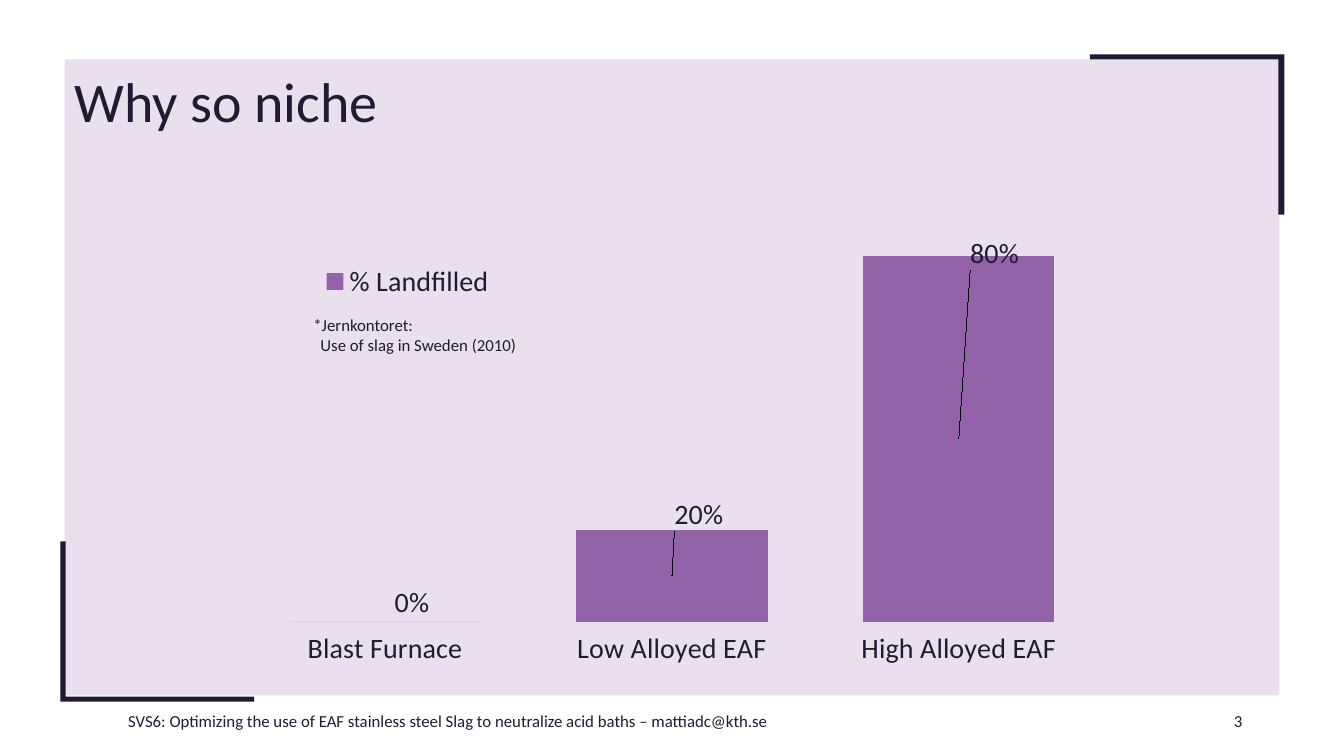
from lxml.etree import SubElement
from pptx import Presentation
from pptx.chart.data import CategoryChartData
from pptx.dml.color import RGBColor
from pptx.enum.chart import XL_CHART_TYPE, XL_LABEL_POSITION, XL_LEGEND_POSITION, XL_TICK_LABEL_POSITION, XL_TICK_MARK
from pptx.enum.shapes import MSO_SHAPE
from pptx.enum.text import MSO_ANCHOR, PP_ALIGN
from pptx.oxml import parse_xml
from pptx.oxml.ns import nsdecls, qn
from pptx.util import Inches, Pt

INK = RGBColor(0x20, 0x1A, 0x33)
PLUM = RGBColor(0x92, 0x63, 0xA9)
FACE = "Calibri"

TITLE = ["Why so niche"]
NOTE = ["*Jernkontoret:", "Use of slag in Sweden (2010)"]
FOOTER = ["SVS6: Optimizing the use of EAF stainless steel Slag to neutralize acid baths – mattiadc@kth.se"]
NUMBER = ["3"]
SERIES = "% Landfilled"
SHARES = [("Blast Furnace", 0), ("Low Alloyed EAF", 0.2), ("High Alloyed EAF", 0.8)]
SHIFTS = [(0.03, -0.04), (0.03, -0.13), (0.04, -0.39)]
CORNERS = [
    [(12.74, 0.54), (10.81, 0.54), (10.81, 0.59), (12.68, 0.59), (12.68, 2.13), (12.74, 2.13)],
    [(0.6, 6.96), (2.52, 6.96), (2.52, 6.91), (0.65, 6.91), (0.65, 5.37), (0.6, 5.37)],
]

deck = Presentation()
deck.slide_width, deck.slide_height = Inches(13.33), Inches(7.5)
slide = deck.slides.add_slide(deck.slide_layouts[6])
shapes = slide.shapes


def style(font, size):
    font.name, font.size = FACE, Pt(size)
    font.color.rgb = INK


def paint(shape, color):
    shape.shadow.inherit = False
    shape.fill.solid()
    shape.fill.fore_color.rgb = color
    shape.line.fill.background()


def write(lines, at, size=12, align=PP_ALIGN.LEFT, anchor=MSO_ANCHOR.TOP, wrap=False, inset=0):
    frame = shapes.add_textbox(*map(Inches, at)).text_frame
    frame.word_wrap = wrap
    frame.vertical_anchor = anchor
    for i, line in enumerate(lines):
        para = frame.add_paragraph() if i else frame.paragraphs[0]
        para.alignment = align
        if i and inset:
            props = para._p.get_or_add_pPr()
            props.set("marL", str(Inches(inset)))
            props.set("indent", "0")
        run = para.add_run()
        run.text = line
        style(run.font, size)


def place(before, **parts):
    holder = before.getparent()
    for old in holder.findall(qn("c:layout")):
        holder.remove(old)
    layout = parse_xml(f"<c:layout {nsdecls('c')}><c:manualLayout/></c:layout>")
    for key, val in parts.items():
        SubElement(layout[0], qn(f"c:{key}")).set("val", str(val))
    before.addprevious(layout)


panel = shapes.add_shape(MSO_SHAPE.RECTANGLE, *map(Inches, (0.64, 0.59, 12.05, 6.31)))
paint(panel, PLUM)
tint = panel._element.spPr.find(qn("a:solidFill"))[0]
SubElement(tint, qn("a:alpha")).set("val", "20000")

for points in CORNERS:
    first, *rest = [(Inches(x), Inches(y)) for x, y in points]
    pen = shapes.build_freeform(*first)
    pen.add_line_segments(rest, close=True)
    paint(pen.convert_to_shape(), INK)

write(FOOTER, (0.92, 6.95, 7.05, 0.4), align=PP_ALIGN.CENTER, anchor=MSO_ANCHOR.MIDDLE, wrap=True)
write(NUMBER, (11.53, 6.95, 0.89, 0.4), align=PP_ALIGN.RIGHT, anchor=MSO_ANCHOR.MIDDLE, wrap=True)

data = CategoryChartData(number_format="0%")
data.categories = [name for name, share in SHARES]
data.add_series(SERIES, [share for name, share in SHARES])
box = map(Inches, (2.22, 1.99, 8.89, 4.72))
chart = shapes.add_chart(XL_CHART_TYPE.COLUMN_STACKED, *box, data).chart
chart.has_title = False
style(chart.font, 20)

cats, vals = chart.category_axis, chart.value_axis
cats.tick_label_position = XL_TICK_LABEL_POSITION.LOW
cats.major_tick_mark = XL_TICK_MARK.NONE
cats.format.line.fill.background()
style(cats.tick_labels.font, 20)
vals.visible = False
vals.has_major_gridlines = False
vals.minimum_scale, vals.maximum_scale = 0, 0.9

plot = chart.plots[0]
plot.gap_width, plot.overlap = 50, 100
plot.vary_by_categories = False
bars = plot.series[0]
bars.format.fill.solid()
bars.format.fill.fore_color.rgb = PLUM
labels = bars.data_labels
labels.show_value = True
labels.number_format, labels.number_format_is_linked = "0%", False
style(labels.font, 20)
for i in range(len(SHARES)):
    label = bars.points[i].data_label
    label.position = XL_LABEL_POSITION.CENTER
    style(label.font, 20)
for mark, (x, y) in zip(chart._chartSpace.iter(qn("c:dLbl")), SHIFTS):
    place(mark.find(qn("c:idx")).getnext(), x=x, y=y)

chart.has_legend = True
legend = chart.legend
legend.position = XL_LEGEND_POSITION.BOTTOM
legend.include_in_layout = True
style(legend.font, 20)
place(legend._element.find(qn("c:overlay")), xMode="edge", yMode="edge", x=0.1, y=0.12, w=0.21, h=0.1)
place(plot._element, layoutTarget="inner", xMode="edge", yMode="edge", x=0.02, y=0.02, w=0.96, h=0.865)

write(NOTE, (3.01, 3.07, 2.25, 0.5), inset=0.07)
write(TITLE, (0.64, 0.61, 3.33, 0.77), size=40)

deck.save("out.pptx")
